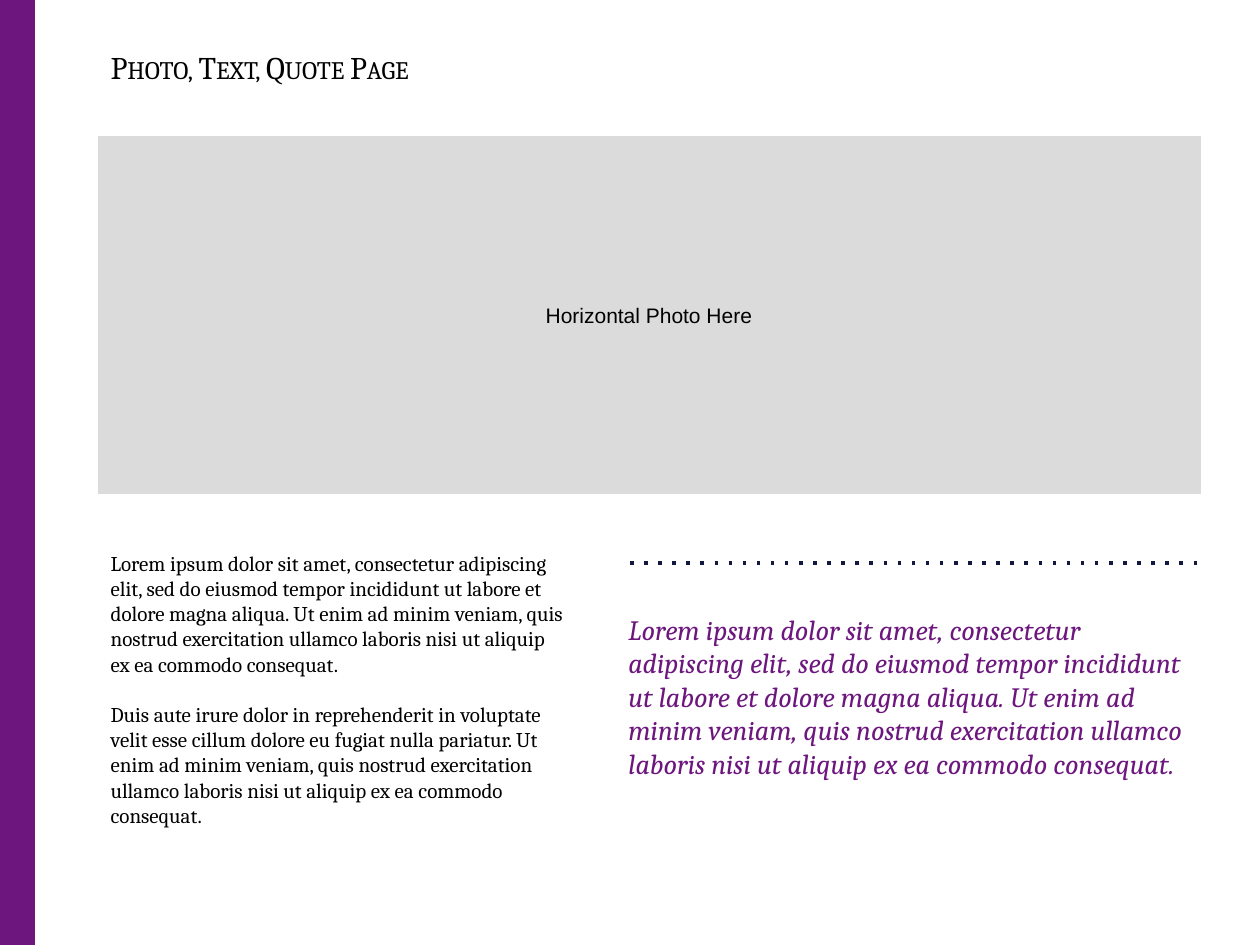
from lxml.etree import SubElement
from pptx import Presentation
from pptx.dml.color import RGBColor
from pptx.enum.shapes import MSO_CONNECTOR, MSO_SHAPE
from pptx.enum.text import MSO_ANCHOR, MSO_AUTO_SIZE, PP_ALIGN as Align
from pptx.oxml.ns import qn
from pptx.util import Emu, Pt

PX_PER_INCH = 126
PURPLE, GREY, NAVY, BLACK = "6C167E", "DBDBDB", "131840", "000000"
LEFT, RIGHT = 98, 1201

QUOTE = (
    "Lorem ipsum dolor sit amet, consectetur adipiscing elit, sed do eiusmod "
    "tempor incididunt ut labore et dolore magna aliqua. Ut enim ad minim "
    "veniam, quis nostrud exercitation ullamco laboris nisi ut aliquip ex ea "
    "commodo consequat."
)
BODY = [
    QUOTE,
    "Duis aute irure dolor in reprehenderit in voluptate velit esse cillum "
    "dolore eu fugiat nulla pariatur. Ut enim ad minim veniam, quis nostrud "
    "exercitation ullamco laboris nisi ut aliquip ex ea commodo consequat.",
]


def px(n):
    return Emu(round(n * 914400 / PX_PER_INCH))


def rgb(value):
    return RGBColor.from_string(value)


def place(sp, x, y, w, h):
    sp.left, sp.top, sp.width, sp.height = px(x), px(y), px(w), px(h)
    return sp


def add_textbox(s, x, y, w, h):
    return s.shapes.add_textbox(px(x), px(y), px(w), px(h))


def write(sp, *paragraphs, size=12, font="Cambria", color=BLACK, italic=False,
          small_caps=False, align=Align.LEFT, gap=0):
    """Fill a shape with unbulleted paragraphs, gap points apart."""
    tf = sp.text_frame
    tf.word_wrap = True
    tf.auto_size = MSO_AUTO_SIZE.NONE
    tf.vertical_anchor = MSO_ANCHOR.TOP
    for i, text in enumerate(paragraphs):
        p = tf.add_paragraph() if i else tf.paragraphs[0]
        p.alignment = align
        p.space_before = Pt(gap if i else 0)
        pPr = p._p.get_or_add_pPr()
        pPr.set("marL", "0")
        pPr.set("indent", "0")
        SubElement(pPr, qn("a:buNone"))
        r = p.add_run()
        r.text = text
        r.font.name, r.font.size, r.font.italic = font, Pt(size), italic
        r.font.color.rgb = rgb(color)
        if small_caps:
            r.font._element.set("cap", "small")


def add_rect(s, x, y, w, h, color):
    sp = s.shapes.add_shape(MSO_SHAPE.RECTANGLE, px(x), px(y), px(w), px(h))
    sp.shadow.inherit = False
    sp.fill.solid()
    sp.fill.fore_color.rgb = rgb(color)
    sp.line.fill.background()


def add_dotted_rule(s, x1, x2, y, color, width):
    rule = s.shapes.add_connector(MSO_CONNECTOR.STRAIGHT, px(x1), px(y), px(x2), px(y))
    rule.line.color.rgb = rgb(color)
    rule.line.width = Pt(width)
    spPr = rule._element.spPr
    SubElement(spPr.find(qn("a:ln")), qn("a:prstDash"), val="dot")
    SubElement(spPr, qn("a:effectLst"))


def main():
    prs = Presentation()
    prs.slide_width, prs.slide_height = px(1260), px(945)
    s = prs.slides.add_slide(prs.slide_layouts[1])
    title, body = s.placeholders

    add_rect(s, 0, 0, 35, 945, PURPLE)
    write(place(title, LEFT, 42, 680, 50), "Photo, Text, Quote Page",
          size=18, small_caps=True)
    write(place(body, LEFT, 544, 481, 344), *BODY, gap=14.4)

    add_rect(s, LEFT, 136, RIGHT - LEFT, 358, GREY)
    write(add_textbox(s, 432, 296, 434, 38), "Horizontal Photo Here",
          font="Arial", align=Align.CENTER)

    add_dotted_rule(s, 630, RIGHT, 563, NAVY, 2)
    write(add_textbox(s, 616, 606, RIGHT - 616, 183), QUOTE,
          size=16, color=PURPLE, italic=True)

    prs.save("out.pptx")


if __name__ == "__main__":
    main()
